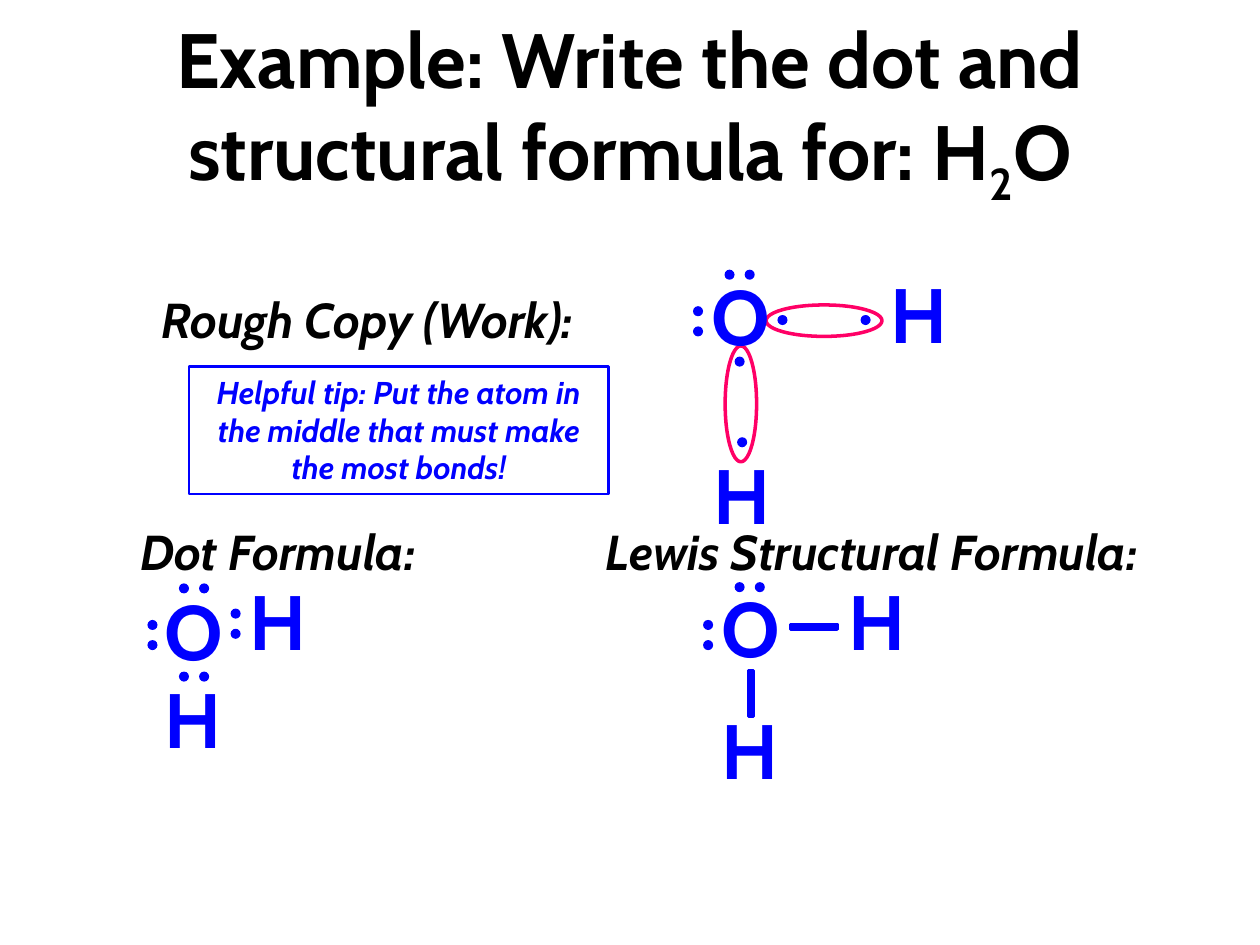
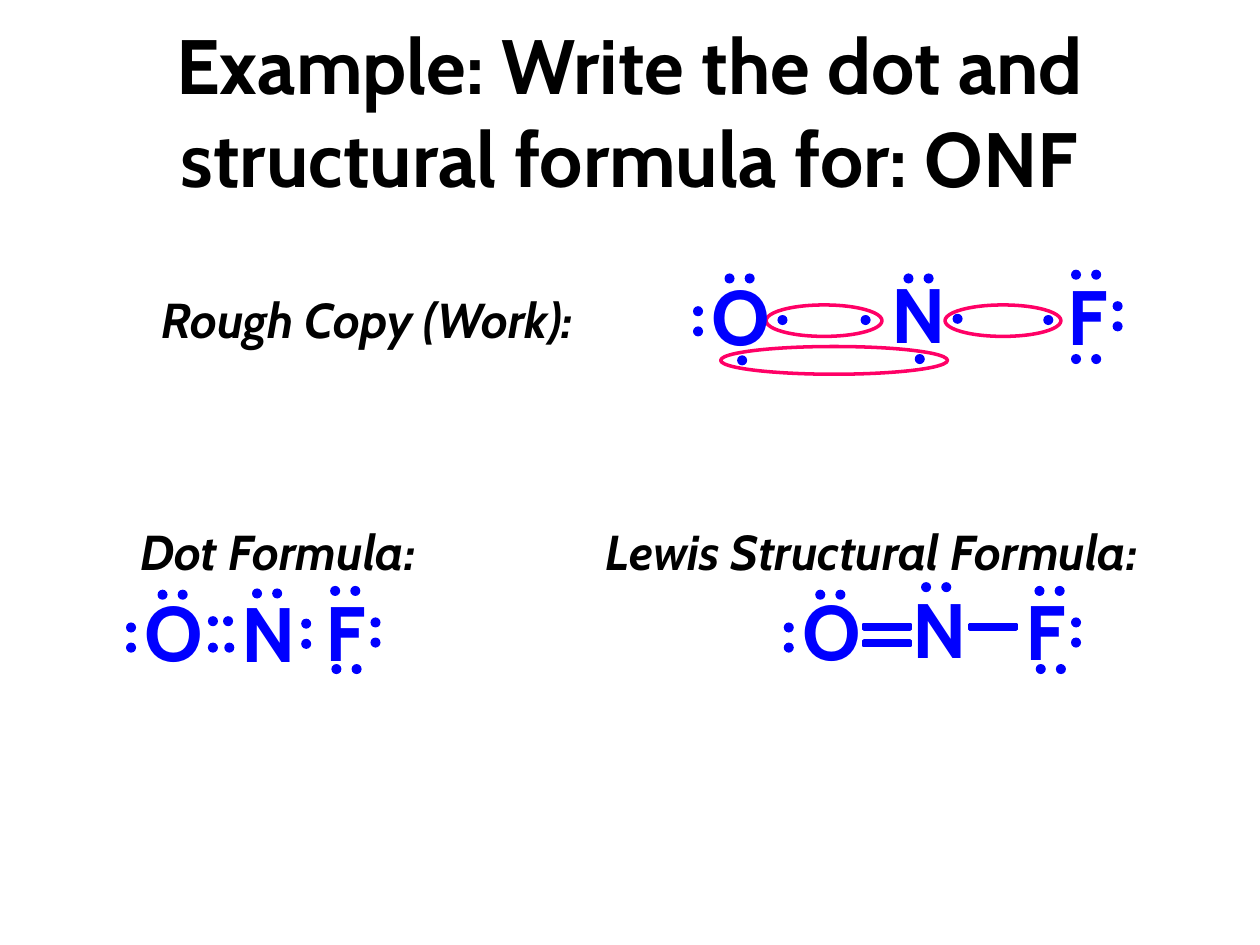
import pptx
import pptx.dml.color
import pptx.enum.shapes
import pptx.enum.text
import pptx.util

Inches = pptx.util.Inches
Pt = pptx.util.Pt
RGBColor = pptx.dml.color.RGBColor
Shape = pptx.enum.shapes.MSO_SHAPE
AutoSize = pptx.enum.text.MSO_AUTO_SIZE
Anchor = pptx.enum.text.MSO_ANCHOR

BLACK = RGBColor(0x00, 0x00, 0x00)
BLUE = RGBColor(0x00, 0x00, 0xFF)
PINK = RGBColor(0xFF, 0x00, 0x66)
FONT = "Cabin"
DOT_SIZE = 0.08
DOT_GAP = 0.16
TITLE_START = "Example: Write the dot and structural formula for: "

HEADINGS = [
    ("Rough Copy (Work):", 0.83, 2.25, 4.17),
    ("Dot Formula:", 0.58, 4.09, 3.25),
    ("Lewis Structural Formula:", 4.42, 4.09, 5),
]

water = {
    "title": [TITLE_START + "H", "2", "O"],
    "tip": "Helpful tip: Put the atom in the middle that must make the most bonds!",
    "rings": [(6.08, 2.42, 0.92, 0.25, 0), (5.42, 3.08, 0.92, 0.25, 270)],
    "atoms": [
        ("O", 5.42, 2.08), ("H", 6.83, 2.07), ("H", 5.43, 3.5),
        ("O", 1.08, 4.58), ("H", 1.75, 4.5), ("H", 1.07, 5.28),
        ("O", 5.5, 4.56), ("H", 6.5, 4.5), ("H", 5.49, 5.53),
    ],
    "single dots": [(6.17, 2.5), (6.83, 2.5), (5.83, 2.83), (5.85, 3.47)],
    "pairs across": [(5.75, 2.14), (1.42, 4.63), (1.42, 5.33), (5.83, 4.62)],
    "pairs down": [(5.5, 2.43), (1.17, 4.92), (1.83, 4.83), (5.58, 4.92)],
    "bonds": [(6.21, 4.89, 0), (5.71, 5.42, 90)],
}
nitrosyl_fluoride = {
    "title": [TITLE_START + "ONF"],
    "tip": "",
    "rings": [
        (6.08, 2.42, 0.92, 0.25, 0),
        (7.5, 2.42, 0.92, 0.25, 0),
        (5.72, 2.75, 1.8, 0.22, 0),
    ],
    "atoms": [
        ("O", 5.42, 2.08), ("N", 6.83, 2.07), ("F", 8.17, 2.08),
        ("O", 0.92, 4.59), ("N", 1.67, 4.6), ("F", 2.28, 4.59),
        ("O", 6.14, 4.58), ("N", 7, 4.57), ("F", 7.84, 4.58),
    ],
    "single dots": [
        (6.17, 2.5), (6.83, 2.5), (5.85, 2.82), (7.26, 2.81), (7.56, 2.49), (8.28, 2.5),
        (1.65, 4.89), (1.77, 4.89), (1.65, 5.1), (1.78, 5.1),
    ],
    "pairs across": [
        (5.75, 2.17), (7.17, 2.17), (8.5, 2.14), (8.5, 2.81),
        (1.25, 4.68), (2, 4.67), (2.62, 4.65), (2.63, 5.27),
        (6.47, 4.68), (7.31, 4.62), (8.21, 4.65), (8.22, 5.27),
    ],
    "pairs down": [
        (5.5, 2.43), (8.83, 2.39), (1, 4.94), (2.39, 4.91),
        (2.94, 4.9), (6.22, 4.94), (8.5, 4.9),
    ],
    "bonds": [(6.79, 4.89, 0), (6.79, 5.02, 0), (7.63, 4.89, 0)],
}


def write(box, pieces, size, colour, italic=False, resize=AutoSize.SHAPE_TO_FIT_TEXT):
    frame = box.text_frame
    frame.word_wrap = True
    frame.auto_size = resize
    para = frame.paragraphs[0]
    para.alignment = pptx.enum.text.PP_ALIGN.CENTER
    for piece in pieces:
        span = para.add_run()
        span.text = piece
        span.font.name = FONT
        span.font.size = Pt(size)
        span.font.bold = True
        span.font.italic = italic
        span.font.color.rgb = colour
        if piece.isdigit():
            span.font._element.set("baseline", "-25000")


def draw(page, kind, left, top, width, height, fill=None, line=None, weight=2, turn=0):
    shape = page.shapes.add_shape(kind, Inches(left), Inches(top), Inches(width), Inches(height))
    shape.shadow.inherit = False
    shape.rotation = turn
    if fill is None:
        shape.fill.background()
    else:
        shape.fill.solid()
        shape.fill.fore_color.rgb = fill
    if line is None:
        shape.line.fill.background()
    else:
        shape.line.color.rgb = line
        shape.line.width = Pt(weight)
    return shape


deck = pptx.Presentation()
deck.slide_width = Inches(10)
deck.slide_height = Inches(7.5)

for molecule in (water, nitrosyl_fluoride):
    page = deck.slides.add_slide(deck.slide_layouts[5])
    title = page.shapes.title
    title.left, title.top = Inches(0.5), Inches(0.25)
    title.width, title.height = Inches(9), Inches(1.25)
    title.text_frame.vertical_anchor = Anchor.MIDDLE
    write(title, molecule["title"], 44, BLACK, resize=AutoSize.NONE)

    for heading, left, top, width in HEADINGS:
        box = page.shapes.add_textbox(Inches(left), Inches(top), Inches(width), Inches(0.57))
        write(box, [heading], 28, BLACK, italic=True)

    for left, top, width, height, turn in molecule["rings"]:
        draw(page, Shape.OVAL, left, top, width, height, line=PINK, turn=turn)

    for symbol, left, top in molecule["atoms"]:
        box = page.shapes.add_textbox(Inches(left), Inches(top), Inches(0.92), Inches(0.84))
        write(box, [symbol], 44, BLUE)

    dots = list(molecule["single dots"])
    for left, top in molecule["pairs across"]:
        dots += [(left, top), (left + DOT_GAP, top)]
    for left, top in molecule["pairs down"]:
        dots += [(left, top), (left, top + DOT_GAP)]
    for left, top in dots:
        draw(page, Shape.OVAL, left, top, DOT_SIZE, DOT_SIZE, fill=BLUE)

    for left, top, turn in molecule["bonds"]:
        draw(page, Shape.MATH_MINUS, left, top, 0.5, 0.17, fill=BLUE, line=BLUE, turn=turn)

    if molecule["tip"]:
        tip = draw(page, Shape.RECTANGLE, 1.5, 2.91, 3.33, 1.01, line=BLUE, weight=1.5)
        tip.text_frame.vertical_anchor = Anchor.TOP
        write(tip, [molecule["tip"]], 18, BLUE, italic=True)

deck.save("out.pptx")
